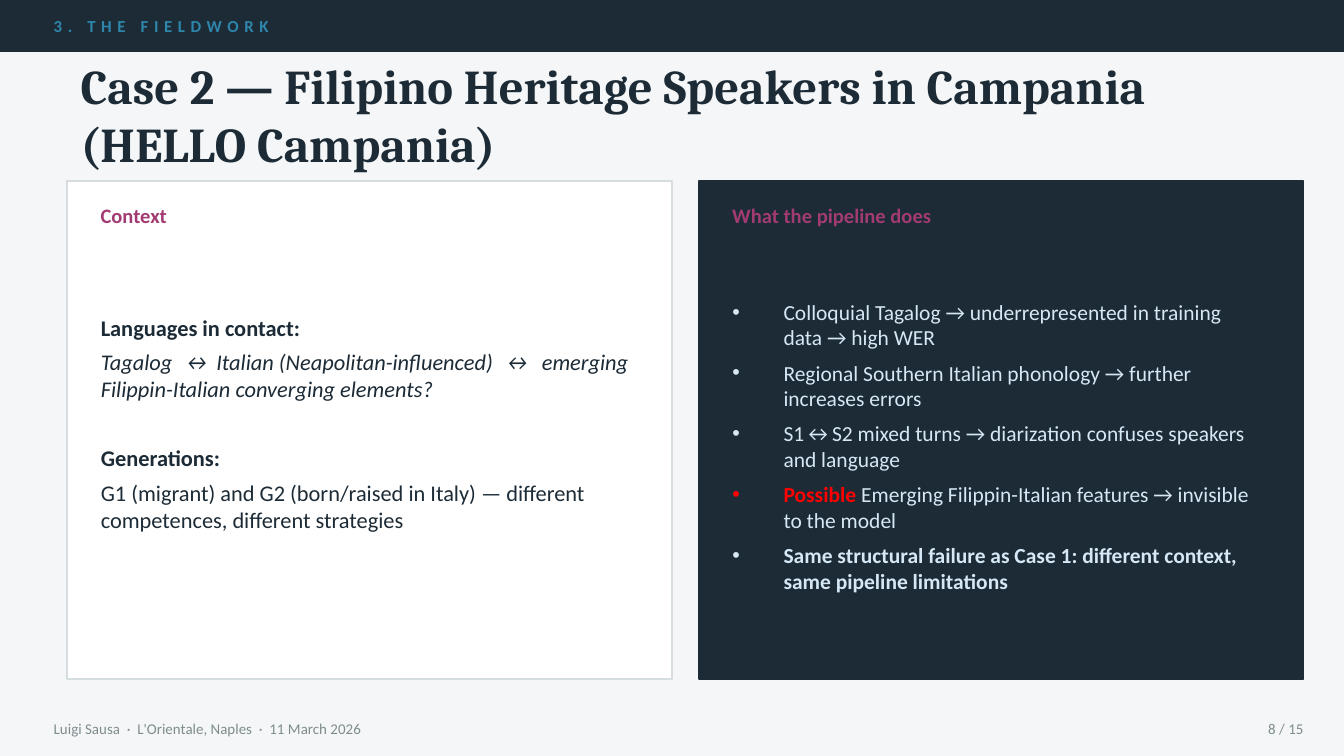
from dataclasses import dataclass

from lxml import etree
from pptx import Presentation
from pptx import util as u
from pptx.dml.color import RGBColor
from pptx.enum import shapes, text
from pptx.oxml import ns


@dataclass(frozen=True)
class Theme:
    """Colours, fonts and type sizes of the slide."""
    ink: str = "1C2B36"
    ground: str = "F4F6F7"
    white: str = "FFFFFF"
    border: str = "D5DDE0"
    section: str = "2E86AB"
    heading: str = "A23B72"
    pale: str = "D6E8F5"
    alert: str = "FF0000"
    muted: str = "7F8C8D"
    sans: str = "Calibri"
    serif: str = "Cambria"
    section_size: float = 9
    title_size: float = 26
    heading_size: float = 11
    body_size: float = 12
    list_size: float = 11.5
    footer_size: float = 8


THEME = Theme()
BOLD = {"bold": True}
ITALIC = {"italic": True}
CONTEXT = [
    ([("Languages in contact:", BOLD)], 4),
    ([("Tagalog  ↔ Italian (Neapolitan-influenced)  ↔  emerging "
       "Filippin-Italian converging elements?", ITALIC)], 22.65),
    ([("Generations:", BOLD)], 4),
    ([("G1 (migrant) and G2 (born/raised in Italy) — different competences, "
       "different strategies", {})], 4),
]
PIPELINE = [
    ([("Colloquial Tagalog → underrepresented in training data → high WER", {})], 5),
    ([("Regional Southern Italian phonology → further increases errors", {})], 5),
    ([("S1↔S2 mixed turns → diarization confuses speakers and language", {})], 5),
    ([("Possible", {"bold": True, "color": THEME.alert}),
      (" Emerging Filippin-Italian features → invisible to the model", {})], 5),
    ([("Same structural failure as Case 1: different context, "
       "same pipeline limitations", BOLD)], 5),
]


def set_values(target, values):
    """Set each named attribute of the target."""
    for name, value in values.items():
        setattr(target, name, value)


def place(box, left, top, width, height):
    """Move and size a box given in inches."""
    set_values(box, {"left": u.Inches(left), "top": u.Inches(top),
                     "width": u.Inches(width), "height": u.Inches(height)})


def set_frame(box, inset=None, bottom=None):
    """Wrap and centre the text of a box vertically, with optional insets."""
    frame = box.text_frame
    set_values(frame, {"word_wrap": True, "auto_size": text.MSO_AUTO_SIZE.NONE,
                       "vertical_anchor": text.MSO_ANCHOR.MIDDLE})
    if inset is not None:
        set_values(frame, {f"margin_{side}": u.Inches(inset)
                           for side in ("left", "top", "right", "bottom")})
    if bottom is not None:
        frame.margin_bottom = u.Inches(bottom)
    return frame


def add_span(para, words, size, color, font=THEME.sans, bold=False, italic=False):
    """Add one formatted run to a paragraph."""
    span = para.add_run()
    span.text = words
    set_values(span.font, {"name": font, "size": u.Pt(size), "bold": bold,
                           "italic": italic})
    span.font.color.rgb = RGBColor.from_string(color)
    return span


def add_label(page, area, words, size, color, inset=None, bold=False,
              align=text.PP_ALIGN.LEFT):
    """Add a one-line text box and return its run."""
    box = page.shapes.add_textbox(*map(u.Inches, area))
    para = set_frame(box, inset).paragraphs[0]
    para.alignment = align
    return add_span(para, words, size, color, bold=bold)


def add_block(page, area, fill, border):
    """Add a flat filled rectangle."""
    block = page.shapes.add_shape(shapes.MSO_SHAPE.RECTANGLE, *map(u.Inches, area))
    block.shadow.inherit = False
    block.fill.solid()
    block.fill.fore_color.rgb = RGBColor.from_string(fill)
    block.line.color.rgb = RGBColor.from_string(border)
    block.line.width = u.Pt(1)


def set_bullet(para, bullet, indent):
    """Give a paragraph a hanging bullet, or none at all."""
    props = para._p.get_or_add_pPr()
    props.set("marL", str(u.Inches(indent)))
    props.set("indent", str(-u.Inches(indent)))
    mark = etree.SubElement(props, ns.qn("a:buChar" if bullet else "a:buNone"))
    if bullet:
        mark.set("char", bullet)


def add_header(page, left, top, width, height):
    """Draw the dark band with the section name."""
    add_block(page, (left, top, width, height), THEME.ink, THEME.ink)
    span = add_label(page, (left + 0.4, top, width - 0.8, height), "3. THE FIELDWORK",
                     THEME.section_size, THEME.section, inset=0, bold=True)
    span._r.get_or_add_rPr().set("spc", "300")


def add_title(page, left, top, width, height):
    """Fill the title placeholder."""
    title = page.shapes.title
    place(title, left, top, width, height)
    para = set_frame(title).paragraphs[0]
    para.alignment = text.PP_ALIGN.LEFT
    add_span(para, "Case 2 — Filipino Heritage Speakers in Campania (HELLO Campania)",
             THEME.title_size, THEME.ink, THEME.serif, bold=True)


def add_panel(page, body, left, top, width, height, heading, items, fill, border,
              color, size, body_top, bullet=None, indent=0, bottom=None):
    """Draw a panel with its heading and its body placeholder."""
    add_block(page, (left, top, width, height), fill, border)
    add_label(page, (left + 0.15, top + 0.1, width - 0.4, 0.3), heading,
              THEME.heading_size, THEME.heading, bold=True)
    page.shapes.element.append(body.element)
    place(body, left + 0.15, top + body_top, width - 0.35, 3)
    frame = set_frame(body, bottom=bottom)
    for index, (spans, after) in enumerate(items):
        para = frame.add_paragraph() if index else frame.paragraphs[0]
        set_bullet(para, bullet, indent)
        set_values(para, {"alignment": text.PP_ALIGN.LEFT, "space_before": u.Pt(0),
                          "space_after": u.Pt(after)})
        for words, style in spans:
            add_span(para, words, **{"size": size, "color": color, **style})


def add_footer(page, left, top, width, height):
    """Place the speaker line and the page number."""
    style = {"size": THEME.footer_size, "color": THEME.muted, "inset": 0}
    add_label(page, (left, top, 8, height),
              "Luigi Sausa  ·  L'Orientale, Naples  ·  11 March 2026", **style)
    add_label(page, (left + width - 0.7, top, 0.7, height), "8 / 15",
              align=text.PP_ALIGN.RIGHT, **style)


def main():
    """Build and save the deck."""
    deck = Presentation()
    set_values(deck, {"slide_width": u.Inches(10),
                      "slide_height": u.Inches(10 * 9 / 16)})
    page = deck.slides.add_slide(deck.slide_layouts.get_by_name("Two Content"))
    page.background.fill.solid()
    page.background.fill.fore_color.rgb = RGBColor.from_string(THEME.ground)
    context, pipeline = list(page.placeholders)[1:]
    add_header(page, 0, 0, 10, 0.38)
    add_title(page, 0.5, 0.5, 9, 0.7)
    add_panel(page, context, 0.5, 1.35, 4.5, 3.7, "Context", CONTEXT, THEME.white,
              THEME.border, THEME.ink, THEME.body_size, 0.43, bottom=0.31)
    add_panel(page, pipeline, 5.2, 1.35, 4.5, 3.7, "What the pipeline does", PIPELINE,
              THEME.ink, THEME.ink, THEME.pale, THEME.list_size, 0.47,
              bullet="•", indent=0.38)
    add_footer(page, 0.4, 5.28, 9.3, 0.28)
    deck.save("out.pptx")


if __name__ == "__main__":
    main()
